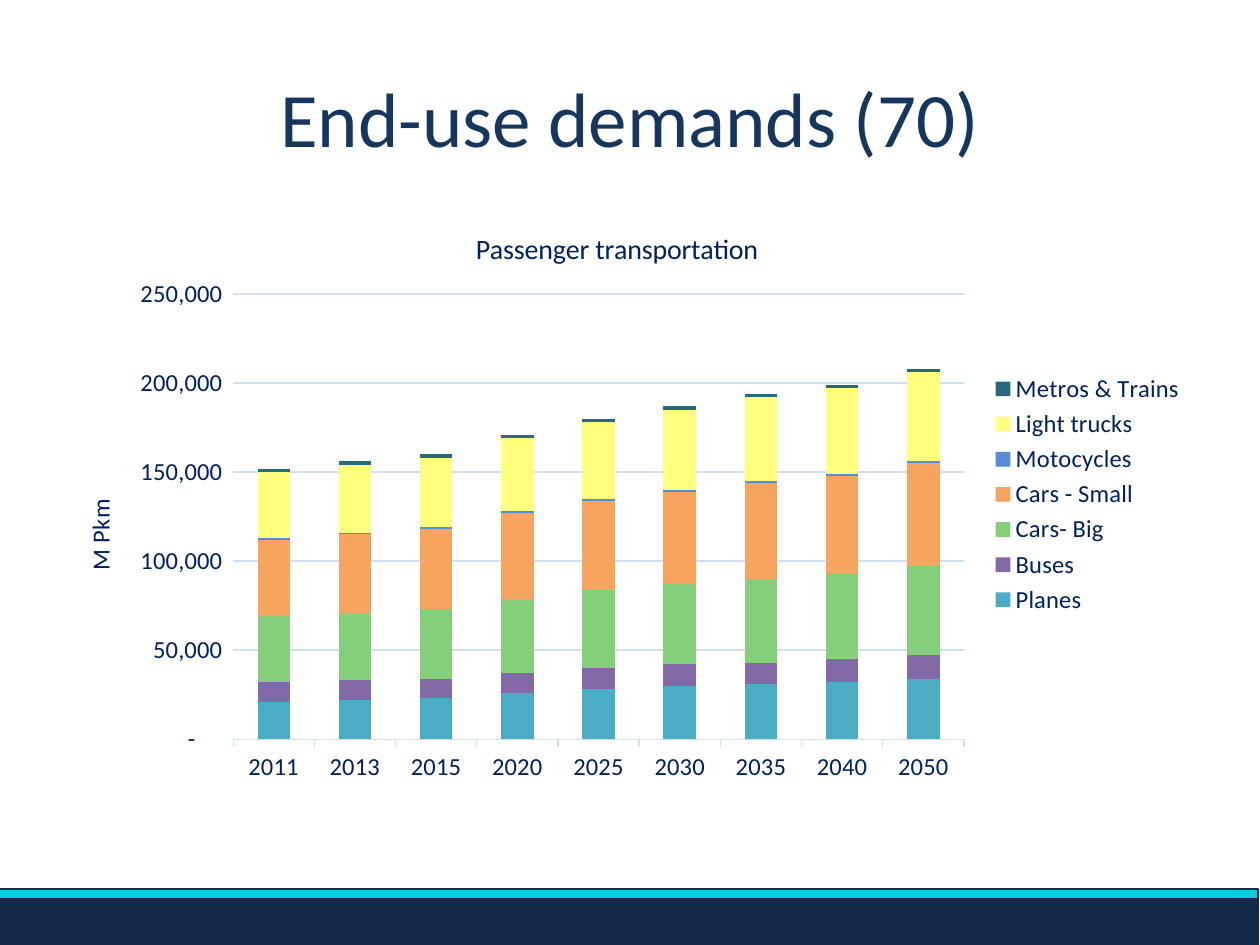
from lxml import etree
from pptx import Presentation
from pptx.chart.data import CategoryChartData
from pptx.dml.color import RGBColor
from pptx.enum.chart import XL_CHART_TYPE as ChartType
from pptx.enum.chart import XL_LEGEND_POSITION as LegendPosition
from pptx.enum.chart import XL_TICK_MARK as TickMark
from pptx.enum.shapes import MSO_SHAPE as Shape
from pptx.enum.text import MSO_ANCHOR as Anchor
from pptx.enum.text import PP_ALIGN as Align
from pptx.oxml.ns import qn
from pptx.util import Pt

FONT = "Calibri"
TITLE_BLUE = RGBColor(0x17, 0x36, 0x5D)
TEXT_BLUE = RGBColor(0x00, 0x20, 0x60)
GRID_BLUE = RGBColor(0xD0, 0xDF, 0xF3)
NAVY = RGBColor(0x11, 0x28, 0x46)
CYAN = RGBColor(0x06, 0xCD, 0xE2)

YEARS = ["2011", "2013", "2015", "2020", "2025", "2030", "2035", "2040", "2050"]
DEMANDS = [
    ("Planes", RGBColor(0x4B, 0xAC, 0xC6), [21, 22, 23, 26, 28, 30, 31, 32, 34]),
    ("Buses", RGBColor(0x83, 0x69, 0xA5), [11, 11, 11, 11, 12, 12, 12, 13, 13]),
    ("Cars- Big", RGBColor(0x85, 0xCF, 0x7B), [37, 38, 39, 42, 44, 45, 47, 48, 50]),
    ("Cars - Small", RGBColor(0xF7, 0xA4, 0x5F), [43, 44, 45, 48, 50, 52, 54, 55, 58]),
    ("Motocycles", RGBColor(0x54, 0x8D, 0xD4), [1] * len(YEARS)),
    ("Light trucks", RGBColor(0xFF, 0xFF, 0x7D), [37, 38, 39, 41, 43, 45, 47, 48, 50]),
    ("Metros & Trains", RGBColor(0x27, 0x6A, 0x7C), [2] * len(YEARS)),
]
NUMBER_FORMAT = '_-* #,##0_-;\\-* #,##0_-;_-* "-"??_-;_-@_'


def style_font(font, size, color):
    font.name = FONT
    font.size = Pt(size)
    font.bold = False
    font.color.rgb = color


def style_line(line, color, width):
    line.color.rgb = color
    line.width = Pt(width)


def set_layout(element, index, inner=False, **fractions):
    for layout in element.findall(qn("c:layout")):
        element.remove(layout)
    layout = etree.Element(qn("c:layout"))
    manual = etree.SubElement(layout, qn("c:manualLayout"))
    if inner:
        etree.SubElement(manual, qn("c:layoutTarget")).set("val", "inner")
    for name in ("xMode", "yMode"):
        etree.SubElement(manual, qn(f"c:{name}")).set("val", "edge")
    for name, value in fractions.items():
        etree.SubElement(manual, qn(f"c:{name}")).set("val", str(value))
    element.insert(index, layout)


def set_chart_title(title, text, size, x, y):
    title.text_frame.text = text
    style_font(title.text_frame.paragraphs[0].font, size, TEXT_BLUE)
    set_layout(title._element, 1, x=x, y=y)


def add_title(slide, left, top, width, height):
    frame = slide.shapes.add_textbox(Pt(left), Pt(top), Pt(width), Pt(height)).text_frame
    frame.word_wrap = True
    frame.vertical_anchor = Anchor.MIDDLE
    paragraph = frame.paragraphs[0]
    paragraph.text = "End-use demands (70)"
    paragraph.alignment = Align.CENTER
    style_font(paragraph.font, 44, TITLE_BLUE)


def add_demand_chart(slide, left, top, width, height):
    data = CategoryChartData(number_format="#,##0")
    data.categories = YEARS
    for name, _, thousands in DEMANDS:
        data.add_series(name, [value * 1000 for value in thousands])
    chart = slide.shapes.add_chart(
        ChartType.COLUMN_STACKED, Pt(left), Pt(top), Pt(width), Pt(height), data
    ).chart
    style_font(chart.font, 14, TEXT_BLUE)
    set_chart_title(chart.chart_title, "Passenger transportation", 16, 0.37, 0.05)
    chart.chart_title.include_in_layout = False

    plot = chart.plots[0]
    plot.gap_width = 150
    plot.overlap = 100
    plot.vary_by_categories = False
    for series, (_, color, _) in zip(plot.series, DEMANDS):
        series.format.fill.solid()
        series.format.fill.fore_color.rgb = color
    set_layout(chart._chartSpace.chart.plotArea, 0, inner=True,
               x=0.164, y=0.165, w=0.634, h=0.744)

    years = chart.category_axis
    years.major_tick_mark = TickMark.OUTSIDE
    style_font(years.tick_labels.font, 14, TEXT_BLUE)
    style_line(years.format.line, GRID_BLUE, 0.75)

    values = chart.value_axis
    values.minimum_scale, values.maximum_scale, values.major_unit = 0, 250000, 50000
    values.major_tick_mark = TickMark.NONE
    values.format.line.fill.background()
    style_line(values.major_gridlines.format.line, GRID_BLUE, 0.75)
    style_font(values.tick_labels.font, 14, TEXT_BLUE)
    values.tick_labels.number_format = NUMBER_FORMAT
    values.tick_labels.number_format_is_linked = False
    set_chart_title(values.axis_title, "M Pkm", 14, 0.03, 0.5)

    chart.has_legend = True
    chart.legend.position = LegendPosition.RIGHT
    chart.legend.include_in_layout = False
    style_font(chart.legend.font, 14, TEXT_BLUE)
    set_layout(chart.legend._element, 1, x=0.82, y=0.29, w=0.17, h=0.42)


def add_bar(slide, left, top, width, height, color, line_width):
    bar = slide.shapes.add_shape(Shape.RECTANGLE, Pt(left), Pt(top), Pt(width), Pt(height))
    bar.shadow.inherit = False
    bar.fill.solid()
    bar.fill.fore_color.rgb = color
    style_line(bar.line, NAVY, line_width)


def add_footer(slide, left, top, width, height):
    stripe = 6
    add_bar(slide, left, top, width, stripe, CYAN, 1.5)
    add_bar(slide, left, top + stripe, width, height - stripe, NAVY, 1)


def main():
    presentation = Presentation()
    presentation.slide_width = Pt(720)
    presentation.slide_height = Pt(540)
    slide = presentation.slides.add_slide(presentation.slide_layouts[6])
    add_title(slide, 36, 21.6, 648, 90)
    add_demand_chart(slide, 25.2, 111.6, 658.8, 342)
    add_footer(slide, -0.5, 508, 719.5, 32)
    presentation.save("out.pptx")


if __name__ == "__main__":
    main()
